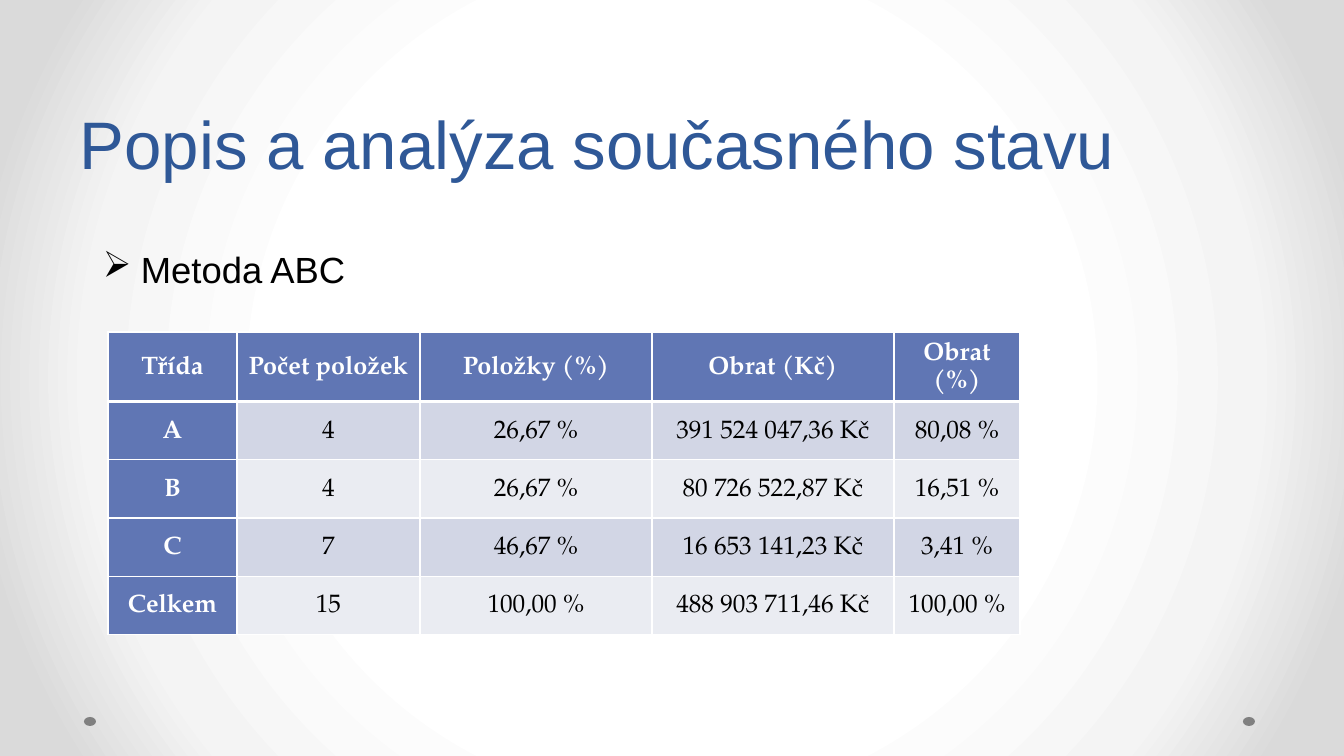
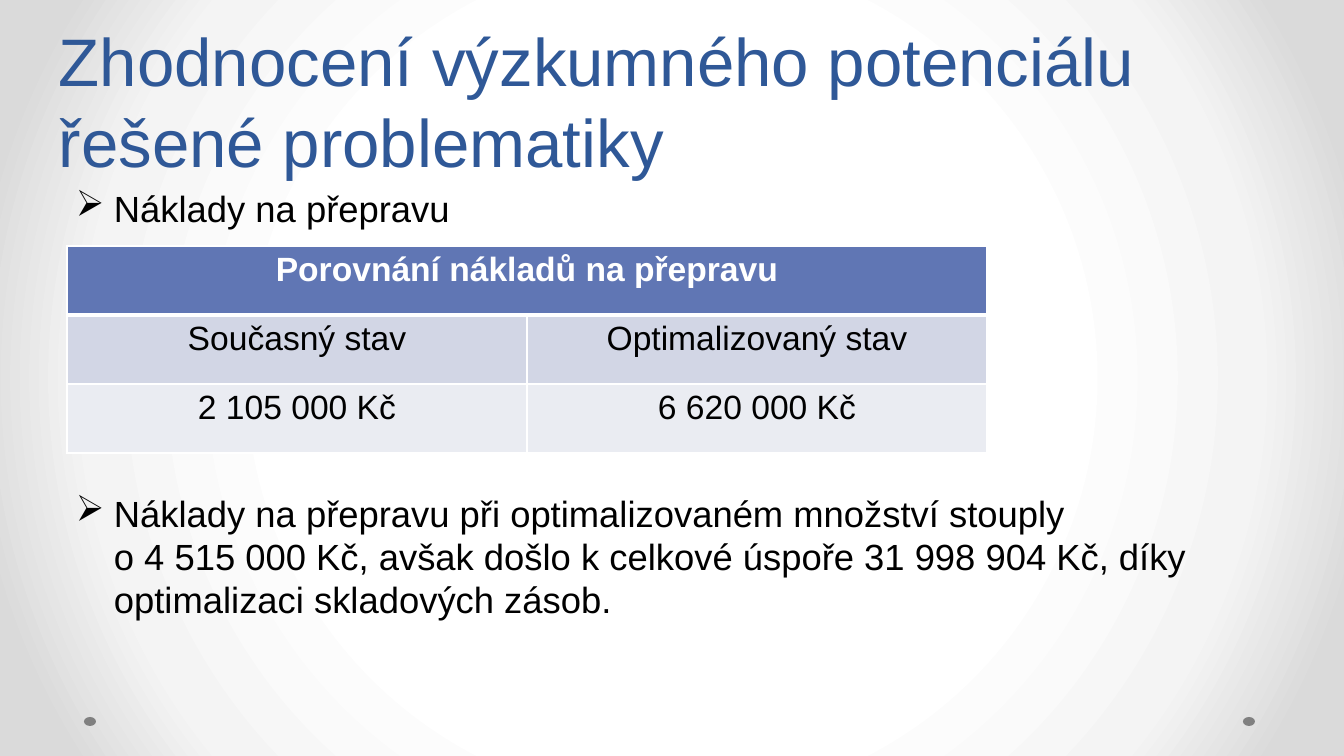
import pptx
import pptx.dml.color
import pptx.enum.shapes
import pptx.enum.text
import pptx.oxml
import pptx.oxml.ns
import pptx.util
import lxml.etree

RGBColor = pptx.dml.color.RGBColor
Pt = pptx.util.Pt
Align = pptx.enum.text.PP_ALIGN
Anchor = pptx.enum.text.MSO_ANCHOR

TITLE_BLUE = RGBColor(0x2F, 0x58, 0x97)
HEADER_BLUE = RGBColor(0x60, 0x76, 0xB4)
BANDS = (RGBColor(0xD2, 0xD6, 0xE5), RGBColor(0xEA, 0xEC, 0xF2))
BLACK = RGBColor(0x00, 0x00, 0x00)
WHITE = RGBColor(0xFF, 0xFF, 0xFF)
DOT_GREY = RGBColor(0x80, 0x80, 0x80)
BACKGROUND_STOPS = ((50, WHITE), (76, RGBColor(0xF4, 0xF4, 0xF4)),
                    (92, RGBColor(0xDA, 0xDA, 0xDA)))

SANS = "Arial"
SERIF = "TeX Gyre Pagella"
PX_PER_INCH = 100.8
BULLET_INDENT = 38


def px(*lengths):
    """Turn px into EMU; one length gives one value."""
    emu = [pptx.util.Emu(round(length * 914400 / PX_PER_INCH)) for length in lengths]
    return emu if len(emu) > 1 else emu[0]


def add_xml(parent, tag, **attributes):
    element = lxml.etree.SubElement(parent, pptx.oxml.ns.qn(tag))
    for name, value in attributes.items():
        element.set(name, str(value))
    return element


class Deck:
    """Holds the shared style and the slide being filled."""

    def __init__(self):
        self.presentation = pptx.Presentation()
        self.presentation.slide_width, self.presentation.slide_height = px(1344, 756)
        self.slide = None
        self.set_background()

    def set_background(self):
        """Circular gradient, set once on the master."""
        fill = self.presentation.slide_master.background.fill
        fill.gradient()
        background = self.presentation.slide_master.element.cSld.bg
        gradient = background.find(".//" + pptx.oxml.ns.qn("a:gradFill"))
        for child in list(gradient):
            gradient.remove(child)
        stops = add_xml(gradient, "a:gsLst")
        for position, color in BACKGROUND_STOPS:
            stop = add_xml(stops, "a:gs", pos=position * 1000)
            add_xml(stop, "a:srgbClr", val=color)
        circle = add_xml(gradient, "a:path", path="circle")
        add_xml(circle, "a:fillToRect", l=50000, t=50000, r=50000, b=50000)

    def new_slide(self):
        self.slide = self.presentation.slides.add_slide(self.presentation.slide_layouts[6])
        for left in (84, 1243):
            self.dot(left, 717)

    def dot(self, left, top):
        shape = self.slide.shapes.add_shape(
            pptx.enum.shapes.MSO_SHAPE.OVAL, *px(left, top, 12, 9))
        shape.shadow.inherit = False
        shape.fill.solid()
        shape.fill.fore_color.rgb = DOT_GREY
        shape.line.fill.background()

    def run(self, paragraph, text, size, color, font=SANS, bold=False):
        run = paragraph.add_run()
        run.text = text
        run.font.name = font
        run.font.size = Pt(size)
        run.font.bold = bold
        run.font.color.rgb = color

    def text_box(self, box, anchor, line_spacing):
        """Add a wrapping text box and return its paragraph."""
        frame = self.slide.shapes.add_textbox(*px(*box)).text_frame
        frame.word_wrap = True
        frame.vertical_anchor = anchor
        paragraph = frame.paragraphs[0]
        paragraph.line_spacing = Pt(line_spacing)
        return paragraph

    def title(self, box, text):
        self.run(self.text_box(box, Anchor.BOTTOM, 58), text, 48, TITLE_BLUE)

    def bullet(self, box, *lines):
        paragraph = self.text_box(box, Anchor.TOP, 31)
        properties = paragraph._p.get_or_add_pPr()
        properties.set("marL", str(px(BULLET_INDENT)))
        properties.set("indent", str(-px(BULLET_INDENT)))
        add_xml(properties, "a:buChar", char="➢")
        for index, line in enumerate(lines):
            if index:
                paragraph.add_line_break()
            self.run(paragraph, line, 26, BLACK)

    def table(self, box, widths, rows, size, font=SANS, header_column=False, compact=False):
        """Fill a banded table; a row with one text spans all columns."""
        table = self.slide.shapes.add_table(len(rows), len(widths), *px(*box)).table
        for column, width in zip(table.columns, widths):
            column.width = px(width)
        for row_index, texts in enumerate(rows):
            if len(texts) == 1:
                table.cell(row_index, 0).merge(table.cell(row_index, len(widths) - 1))
            for column_index in range(len(widths)):
                cell = table.cell(row_index, column_index)
                header = row_index == 0 or (header_column and column_index == 0)
                cell.fill.solid()
                cell.fill.fore_color.rgb = HEADER_BLUE if header else BANDS[(row_index - 1) % 2]
                self.cell_borders(cell, row_index)
                if cell.is_spanned:
                    continue
                paragraph = cell.text_frame.paragraphs[0]
                paragraph.alignment = Align.CENTER
                if compact:
                    cell.vertical_anchor = Anchor.MIDDLE
                    cell.margin_left = cell.margin_right = px(5)
                    cell.margin_top = cell.margin_bottom = 0
                    paragraph.line_spacing = 1.15
                self.run(paragraph, texts[column_index], size,
                         WHITE if header else BLACK, font, header)

    def cell_borders(self, cell, row_index):
        """White lines, thicker under the header row."""
        top = 3 if row_index == 1 else 1
        bottom = 3 if row_index == 0 else 1
        properties = cell._tc.get_or_add_tcPr()
        sides = (("a:lnL", 1), ("a:lnR", 1), ("a:lnT", top), ("a:lnB", bottom))
        for index, (tag, width) in enumerate(sides):
            line = add_xml(properties, tag, w=Pt(width))
            add_xml(add_xml(line, "a:solidFill"), "a:srgbClr", val=WHITE)
            properties.insert(index, line)


def main():
    deck = Deck()

    # ABC method
    deck.new_slide()
    deck.title((70, 43, 1158, 145), "Popis a analýza současného stavu")
    deck.bullet((93, 242, 1189, 54), "Metoda ABC")
    deck.table(
        (108, 332, 912, 291), (129, 183, 232, 242, 126),
        (("Třída", "Počet položek", "Položky (%)", "Obrat (Kč)", "Obrat (%)"),
         ("A", "4", "26,67 %", "391 524 047,36 Kč", "80,08 %"),
         ("B", "4", "26,67 %", "80 726 522,87 Kč", "16,51 %"),
         ("C", "7", "46,67 %", "16 653 141,23 Kč", "3,41 %"),
         ("Celkem", "15", "100,00 %", "488 903 711,46 Kč", "100,00 %")),
        18, SERIF, header_column=True, compact=True)

    # Transport costs
    deck.new_slide()
    deck.title((49, 61, 1186, 125), "Zhodnocení výzkumného potenciálu řešené problematiky")
    deck.bullet((66, 181, 1203, 54), "Náklady na přepravu")
    deck.table(
        (67, 246, 920, 207), (460, 460),
        (("Porovnání nákladů na přepravu",),
         ("Současný stav", "Optimalizovaný stav"),
         ("2 105 000 Kč", "6 620 000 Kč")),
        24)
    deck.bullet(
        (66, 486, 1203, 141),
        "Náklady na přepravu při optimalizovaném množství stouply",
        "o 4 515 000 Kč, avšak došlo k celkové úspoře 31 998 904 Kč, "
        "díky optimalizaci skladových zásob.")

    deck.presentation.save("out.pptx")


if __name__ == "__main__":
    main()
